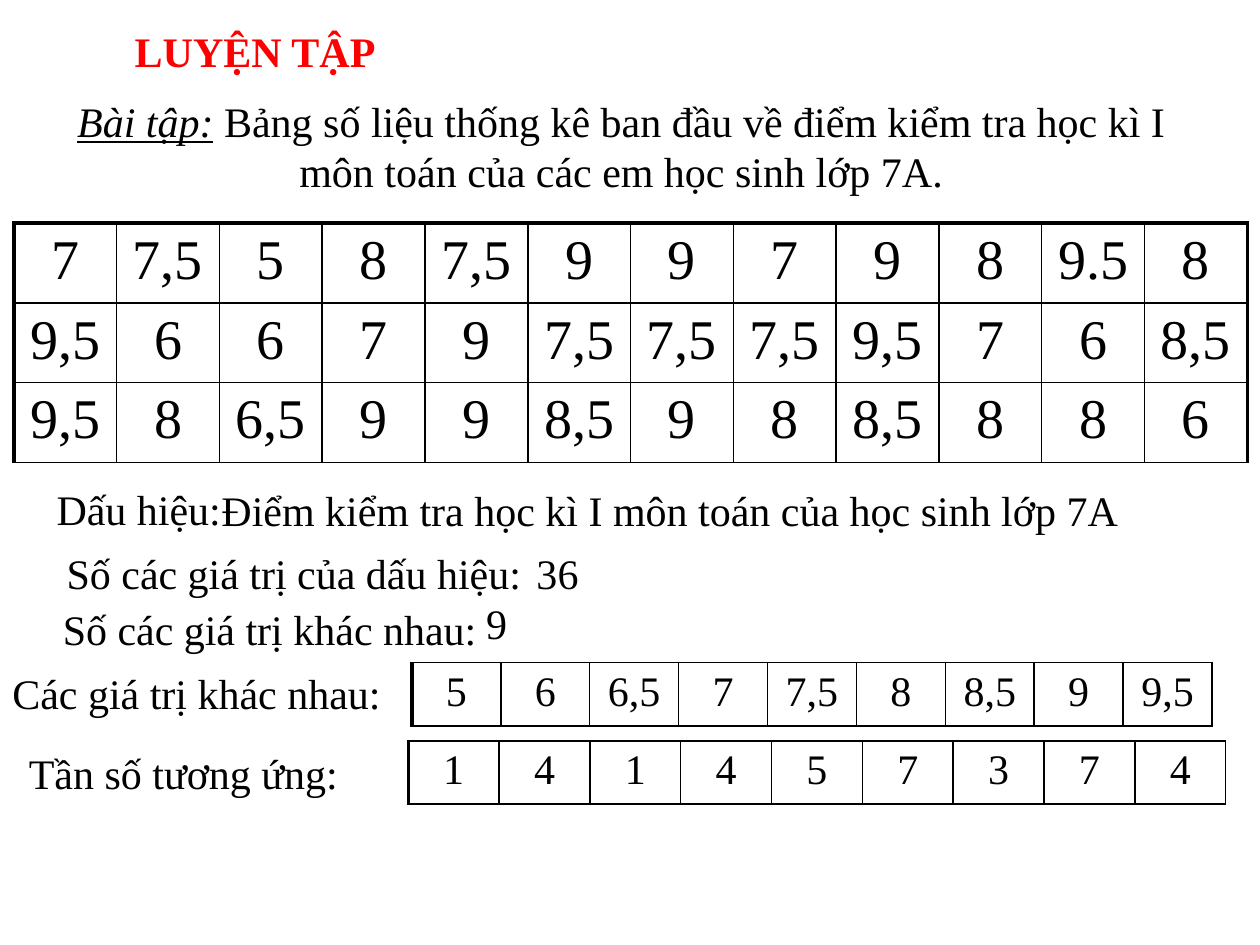
from lxml.etree import SubElement
from pptx import Presentation
from pptx.dml.color import RGBColor
from pptx.enum.text import MSO_ANCHOR, MSO_AUTO_SIZE, PP_ALIGN
from pptx.oxml.ns import qn
from pptx.util import Pt

FONT = "Times New Roman"
BLACK, RED = "000000", "FF0000"
THIN, THICK = 1, 2.25

SCORES = [
    "7 7,5 5 8 7,5 9 9 7 9 8 9.5 8".split(),
    "9,5 6 6 7 9 7,5 7,5 7,5 9,5 7 6 8,5".split(),
    "9,5 8 6,5 9 9 8,5 9 8 8,5 8 8 6".split(),
]
DISTINCT_VALUES = ["5 6 6,5 7 7,5 8 8,5 9 9,5".split()]
FREQUENCIES = ["1 4 1 4 5 7 3 7 4".split()]

# text, left, top, width, wrap
STATEMENTS = [
    ("Dấu hiệu:", 25.2, 273, 130.3, True),
    ("Điểm kiểm tra học kì I môn toán của học sinh lớp 7A", 119.5, 273.6, 563.8, True),
    ("Số các giá trị của dấu hiệu:", 31, 309.6, 277.9, True),
    ("36", 299.5, 309.6, 38.9, False),
    ("Số các giá trị khác nhau:", 28.8, 341.3, 268.6, False),
    ("9", 270.7, 337.7, 26.6, False),
    ("Các giá trị khác nhau:", 0, 378, 231.1, False),
    ("Tần số tương ứng:", 9.4, 423.4, 198.7, True),
]


def color(hex_value):
    return RGBColor.from_string(hex_value)


def write(paragraph, text, size=24, hex_value=BLACK, bold=False, italic=False,
          underline=False, align=PP_ALIGN.LEFT):
    paragraph.alignment = align
    run = paragraph.add_run()
    run.text = text
    font = run.font
    font.name, font.size = FONT, Pt(size)
    font.bold, font.italic, font.underline = bold, italic, underline
    font.color.rgb = color(hex_value)


def place(shape, left, top, width, height):
    shape.left, shape.top = Pt(left), Pt(top)
    shape.width, shape.height = Pt(width), Pt(height)


def add_title(slide):
    title = slide.shapes.title
    place(title, 31, 49, 648, 68.4)
    frame = title.text_frame
    frame.auto_size = MSO_AUTO_SIZE.NONE
    frame.vertical_anchor = MSO_ANCHOR.MIDDLE
    paragraph = frame.paragraphs[0]
    write(paragraph, "Bài tập:", italic=True, underline=True, align=PP_ALIGN.CENTER)
    write(paragraph, " Bảng số liệu thống kê ban đầu về điểm kiểm tra học kì I "
          "môn toán của các em học sinh lớp 7A.", align=PP_ALIGN.CENTER)


def add_text(slide, text, left, top, width, height=36, wrap=True,
             anchor=MSO_ANCHOR.TOP, **text_format):
    box = slide.shapes.add_textbox(Pt(left), Pt(top), Pt(width), Pt(height))
    frame = box.text_frame
    frame.word_wrap = wrap
    frame.vertical_anchor = anchor
    write(frame.paragraphs[0], text, **text_format)


def set_borders(cell, left, right, top, bottom):
    properties = cell._tc.get_or_add_tcPr()
    widths = {"a:lnL": left, "a:lnR": right, "a:lnT": top, "a:lnB": bottom}
    for tag, width in widths.items():
        line = SubElement(properties, qn(tag), w=str(Pt(width)))
        fill = SubElement(line, qn("a:solidFill"))
        SubElement(fill, qn("a:srgbClr"), val=BLACK)


def add_value_table(slide, rows, left, top, width, row_height, size=24, framed=False):
    """Draw equal columns; the left edge is thick, as are top and right if framed."""
    row_count, column_count = len(rows), len(rows[0])
    shape = slide.shapes.add_table(row_count, column_count, Pt(left), Pt(top),
                                   Pt(width), Pt(row_height * row_count))
    table = shape.table
    table.first_row = table.horz_banding = False
    for row in table.rows:
        row.height = Pt(row_height)
    for row_index, values in enumerate(rows):
        for column_index, value in enumerate(values):
            cell = table.cell(row_index, column_index)
            last = column_index == column_count - 1
            set_borders(cell,
                        left=THICK if column_index == 0 else THIN,
                        right=THICK if framed and last else THIN,
                        top=THICK if framed and row_index == 0 else THIN,
                        bottom=THIN)
            cell.fill.background()
            write(cell.text_frame.paragraphs[0], value, size=size, align=PP_ALIGN.CENTER)


def main():
    presentation = Presentation()
    presentation.slide_width, presentation.slide_height = Pt(720), Pt(540)
    slide = presentation.slides.add_slide(presentation.slide_layouts[5])

    add_title(slide)
    add_text(slide, "LUYỆN TẬP", 42.5, 3.6, 206.6, 50.4, anchor=MSO_ANCHOR.MIDDLE,
             hex_value=RED, bold=True, align=PP_ALIGN.CENTER)
    add_value_table(slide, SCORES, 7.9, 127.4, 704.9, 45.2, size=32, framed=True)
    for text, left, top, width, wrap in STATEMENTS:
        add_text(slide, text, left, top, width, wrap=wrap)
    add_value_table(slide, DISTINCT_VALUES, 235.4, 378.7, 457.2, 36)
    add_value_table(slide, FREQUENCIES, 233.3, 423.4, 467.3, 36)

    presentation.save("out.pptx")


if __name__ == "__main__":
    main()
